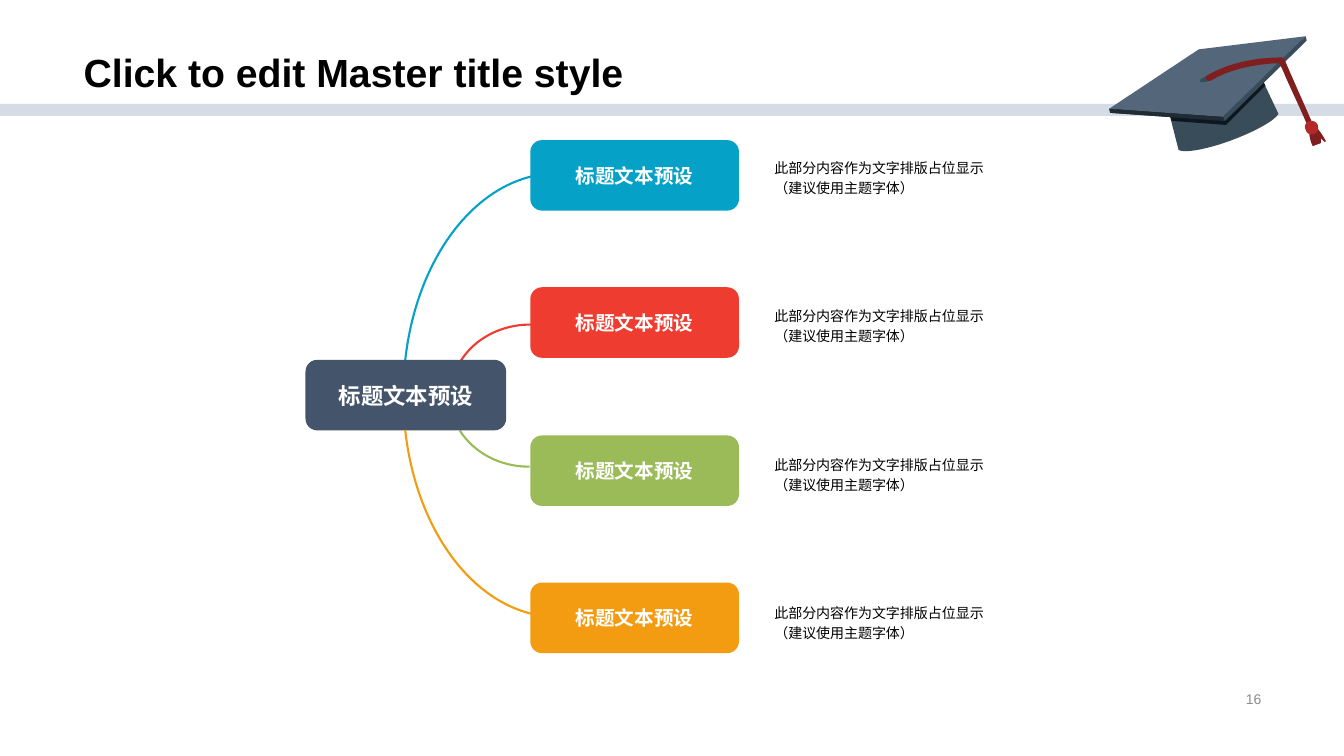
import copy

import lxml.etree
import pptx
import pptx.dml.color
import pptx.enum.shapes
import pptx.enum.text
import pptx.oxml.ns
import pptx.util

SCALE = 9144
SHAPES = pptx.enum.shapes.MSO_SHAPE
ALIGN = pptx.enum.text.PP_ALIGN
ANCHOR = pptx.enum.text.MSO_ANCHOR

BRANCH_COLORS = ["06A1C6", "EE3C30", "9BBB59", "F39C12"]
LABEL = "标题文本预设"
DESCRIPTION = "此部分内容作为文字排版占位显示 \n（建议使用主题字体）"

CAP_PARTS = [
    ("7F1F1F", [(1314, 141), (1315, 140), (1313, 136, 1308, 128, 1305, 126),
                (1300, 124, 1299, 128, 1299, 128), (1297, 135, 1302, 145, 1302, 145),
                (1310, 142), (1310, 137)]),
    ("384C59", [(1268, 113), (1242, 58), (1154, 90), (1169, 149),
                (1176, 152, 1198, 148, 1222, 139), (1246, 130, 1265, 119, 1268, 113)]),
    ("0C171F", [(1242, 58), (1154, 91), (1162, 120), (1216, 124), (1255, 85)]),
    ("1F2B35", [(1215, 120), (1101, 112), (1190, 53), (1296, 40)]),
    ("54667A", [(1213, 116), (1100, 108), (1189, 49), (1295, 36)]),
    ("1F2B35", [(1100, 108), (1101, 112), (1215, 120), (1213, 116)]),
    ("384C59", [(1295, 36), (1296, 40), (1215, 120), (1213, 116)]),
    ("384C59", [(1208, 74), (1209, 75, 1205, 78, 1200, 80), (1195, 82, 1190, 82, 1190, 81),
                (1189, 79, 1193, 77, 1198, 75), (1203, 73, 1208, 73, 1208, 74)]),
    ("7F1F1F", [(1201, 80), (1219, 69, 1240, 65, 1261, 63), (1263, 63, 1267, 63, 1269, 63),
                (1272, 69), (1280, 88, 1289, 106, 1297, 125), (1298, 129, 1304, 127, 1302, 123),
                (1293, 102, 1283, 80, 1274, 59), (1273, 57, 1272, 57, 1271, 57),
                (1246, 57, 1219, 62, 1197, 75), (1194, 77, 1198, 82, 1201, 80)]),
    ("B52828", [(1307, 124), (1308, 128, 1307, 132, 1303, 133), (1300, 134, 1296, 133, 1295, 129),
                (1293, 125, 1295, 122, 1298, 120), (1302, 119, 1306, 121, 1307, 124)]),
]


def px(value):
    return pptx.util.Emu(value * SCALE)


def color(value):
    return pptx.dml.color.RGBColor.from_string(value)


def write(shape, text, size, fill="000000", bold=False, align=ALIGN.LEFT,
          anchor=ANCHOR.MIDDLE, wrap=True, spacing=1.0, margins=None):
    frame = shape.text_frame
    frame.auto_size = pptx.enum.text.MSO_AUTO_SIZE.NONE
    frame.word_wrap = wrap
    frame.vertical_anchor = anchor
    if margins:
        (frame.margin_left, frame.margin_top,
         frame.margin_right, frame.margin_bottom) = map(px, margins)
    paragraph = frame.paragraphs[0]
    paragraph.text = text
    paragraph.alignment = align
    paragraph.line_spacing = spacing
    for run in paragraph.runs:
        run.font.name = "Arial"
        run.font.size = pptx.util.Pt(size)
        run.font.bold = bold
        run.font.color.rgb = color(fill)
    properties = paragraph.runs[0].font._element
    for line_break in paragraph._p.findall(pptx.oxml.ns.qn("a:br")):
        line_break.append(copy.deepcopy(properties))


def bend(shape, steps):
    lines = iter(list(shape._element.iter(pptx.oxml.ns.qn("a:lnTo"))))
    for step in steps:
        segment = [next(lines) for _ in range(len(step) // 2)]
        if len(segment) == 3:
            curve = lxml.etree.Element(pptx.oxml.ns.qn("a:cubicBezTo"))
            segment[0].addprevious(curve)
            for line in segment:
                curve.append(line[0])
                line.getparent().remove(line)


class SlideBuilder:
    def __init__(self, slide):
        self.slide = slide

    def paint(self, shape, fill):
        shape.shadow.inherit = False
        shape.fill.solid()
        shape.fill.fore_color.rgb = color(fill)
        shape.line.fill.background()
        return shape

    def title(self, text, *box):
        shape = self.slide.shapes.title
        shape.left, shape.top, shape.width, shape.height = map(px, box)
        write(shape, text, 28, bold=True, anchor=ANCHOR.BOTTOM, spacing=0.9)

    def block(self, kind, fill, *box):
        return self.paint(self.slide.shapes.add_shape(kind, *map(px, box)), fill)

    def label(self, text, size, fill, *box):
        shape = self.block(SHAPES.ROUNDED_RECTANGLE, fill, *box)
        write(shape, text, size, fill="FFFFFF", bold=True, align=ALIGN.CENTER, wrap=False)

    def text(self, text, size, *box, **style):
        write(self.slide.shapes.add_textbox(*map(px, box)), text, size, **style)

    def arc(self, stroke, start, end, *box):
        shape = self.slide.shapes.add_shape(SHAPES.ARC, *map(px, box))
        shape.shadow.inherit = False
        shape.adjustments[0] = start * 0.6
        shape.adjustments[1] = end * 0.6
        shape._element.spPr.find(pptx.oxml.ns.qn("a:xfrm")).set("flipH", "1")
        shape.fill.background()
        shape.line.color.rgb = color(stroke)
        shape.line.width = pptx.util.Pt(1.5)

    def outline(self, fill, path):
        start, *steps = path
        points = [step[index:index + 2] for step in steps for index in range(0, len(step), 2)]
        builder = self.slide.shapes.build_freeform(*start, scale=SCALE)
        builder.add_line_segments(points, close=True)
        shape = self.paint(builder.convert_to_shape(), fill)
        bend(shape, steps)


def main():
    presentation = pptx.Presentation()
    presentation.slide_width, presentation.slide_height = px(1333), px(750)
    builder = SlideBuilder(presentation.slides.add_slide(presentation.slide_layouts[5]))
    blue, red, green, orange = BRANCH_COLORS

    builder.block(SHAPES.RECTANGLE, "D6DCE5", 0, 103, 1333, 12)
    for fill, path in CAP_PARTS:
        builder.outline(fill, path)

    builder.title("Click to edit Master title style", 73, 0, 1028, 100)
    builder.text("16", 10, 945, 682, 316, 23, fill="8C8C8C", align=ALIGN.RIGHT)

    builder.arc(red, 269, 333.36, 447, 322, 157, 141)
    builder.arc(green, 26.92, 90.66, 446, 322, 157, 141)
    builder.arc(blue, 270, 347.35, 400, 172, 305, 440)
    for index, fill in enumerate(BRANCH_COLORS):
        builder.label(LABEL, 14, fill, 526, round(139 + index * 439 / 3), 207, 70)
        builder.text(DESCRIPTION, 10, 729, round(144 + index * 442 / 3), 251, 61,
                     spacing=1.2, margins=(39, 0, 0, 0))
    builder.label(LABEL, 16, "44546A", 303, 357, 199, 70)
    builder.arc(orange, 12.89, 90.54, 400, 172, 305, 440)

    presentation.save("out.pptx")


if __name__ == "__main__":
    main()
